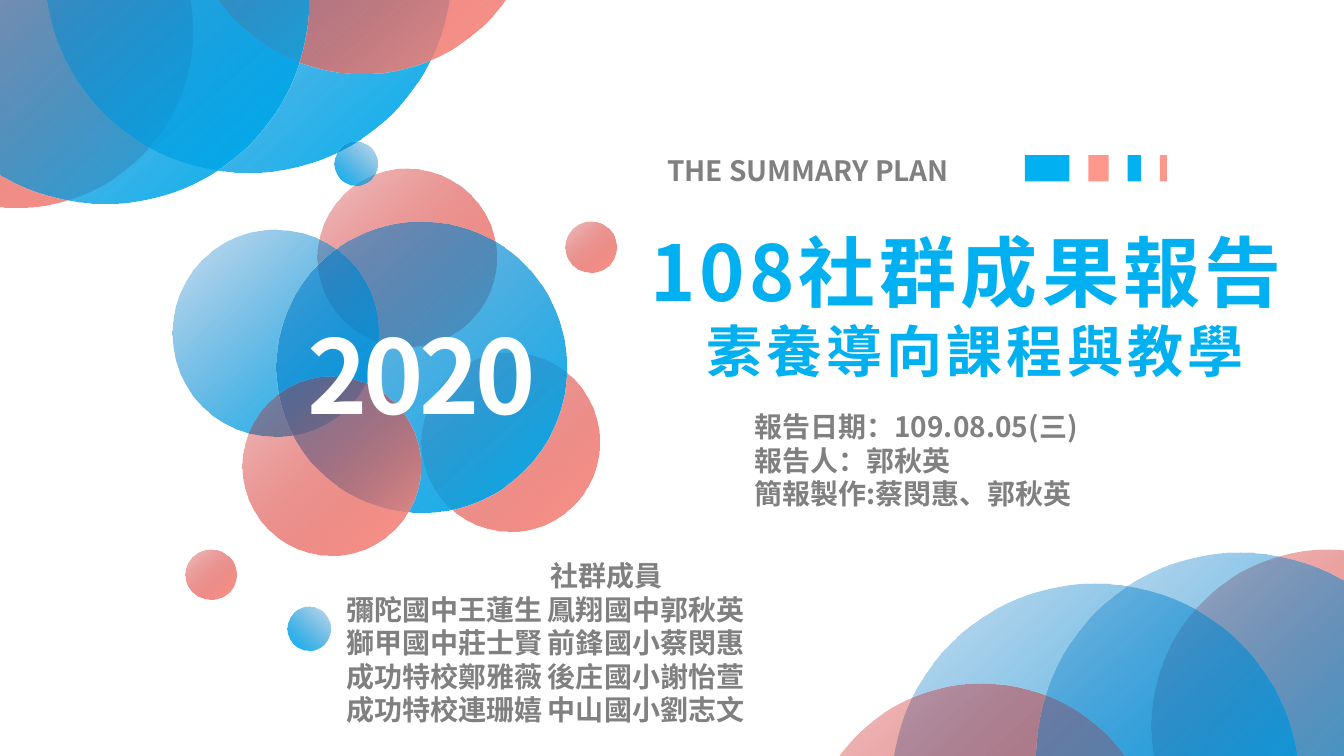
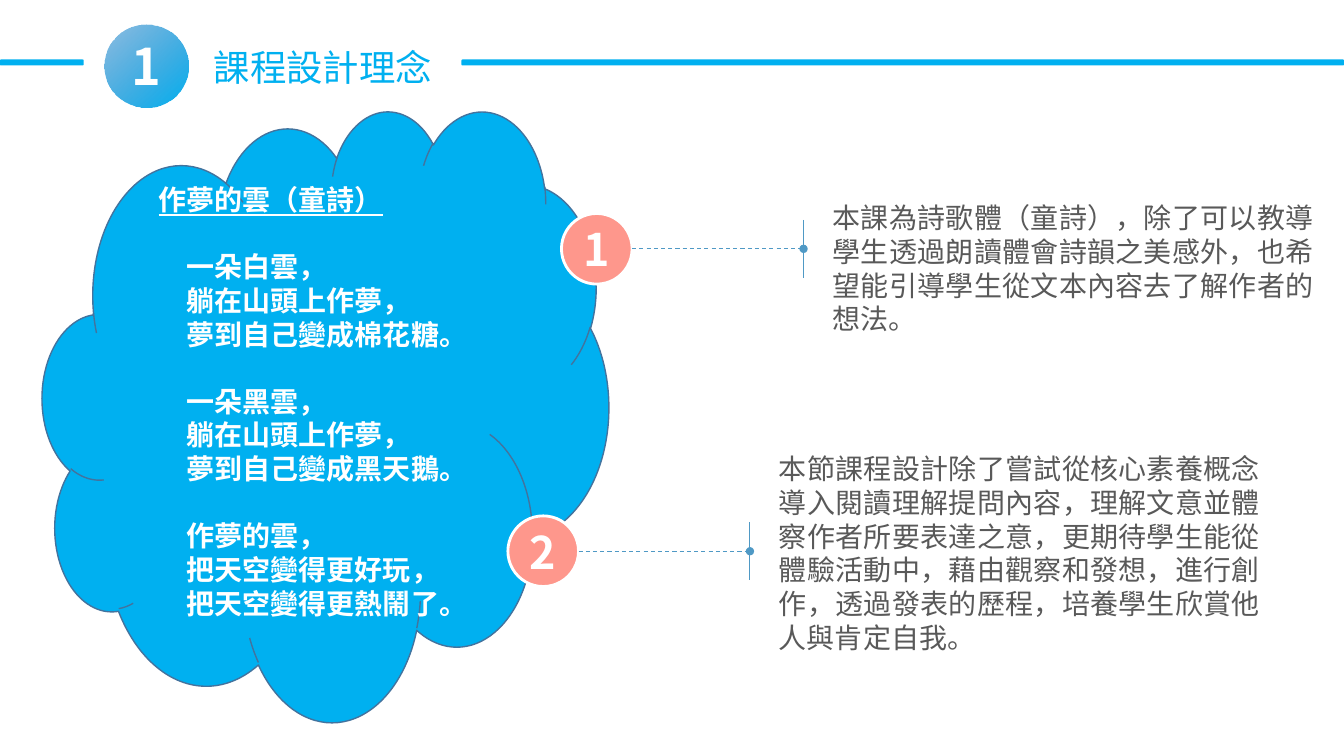
from dataclasses import dataclass

from lxml import etree
from pptx import Presentation
from pptx.dml.color import RGBColor
from pptx.enum.dml import MSO_LINE
from pptx.enum.shapes import MSO_CONNECTOR, MSO_SHAPE
from pptx.enum.text import MSO_ANCHOR, MSO_AUTO_SIZE, PP_ALIGN
from pptx.oxml.ns import qn
from pptx.util import Cm, Pt

LEFT, CENTER, JUSTIFY = PP_ALIGN.LEFT, PP_ALIGN.CENTER, PP_ALIGN.JUSTIFY
TOP, MIDDLE = MSO_ANCHOR.TOP, MSO_ANCHOR.MIDDLE
OVAL, RECT = MSO_SHAPE.OVAL, MSO_SHAPE.RECTANGLE
ROUNDED, CLOUD = MSO_SHAPE.ROUNDED_RECTANGLE, MSO_SHAPE.CLOUD
STRAIGHT, DASH = MSO_CONNECTOR.STRAIGHT, MSO_LINE.DASH
NO_FIT = MSO_AUTO_SIZE.NONE


@dataclass(frozen=True)
class Theme:
    """Colours, font and type sizes of the deck."""
    font: str = "Noto Sans CJK SC"
    blue: str = "00B0F0"
    deep_blue: str = "0070C0"
    coral: str = "FE978C"
    deep_red: str = "C00000"
    white: str = "FFFFFF"
    grey: str = "808080"
    ink: str = "595959"
    outline: str = "43739E"
    rule: str = "4F99C5"
    year: int = 73
    cover: int = 55
    subtitle: int = 40
    badge: int = 36
    marker: int = 32
    heading: int = 26
    body: int = 20
    leading: float = 1.2


T = Theme()
RED = (T.deep_red, T.coral)
BLUE = (T.deep_blue, T.blue)
LIGHT_TOP_LEFT, LIGHT_TOP_RIGHT = 312, 228
SLIDE_W, SLIDE_H = 33.87, 19.05

COVER_BUBBLES = [
    (RED, -4.04, -3.66, 8.9),
    (BLUE, 1.12, -5.92, 10.27),
    (RED, 4.67, -7.04, 8.9),
    (BLUE, -2.49, -5.13, 10.27),
    (RED, 29.03, 13.84, 8.9),
    (BLUE, 22.48, 14.71, 10.27),
    (RED, 20.29, 17.22, 8.9),
    (BLUE, 26.11, 13.92, 10.27),
    (RED, 8, 4.24, 4.5),
    (RED, 10.62, 8.89, 4.5),
    (BLUE, 4.34, 5.79, 5.21),
    (BLUE, 6.96, 5.59, 7.32, 44),
    (BLUE, 8.43, 3.58, 1.09, 22, LIGHT_TOP_RIGHT),
    (RED, 14.25, 5.59, 1.28),
    (RED, 6.1, 9.5, 4.5),
    (BLUE, 7.24, 15.29, 1.09, 22, LIGHT_TOP_RIGHT),
    (RED, 4.67, 13.84, 1.28),
]
REPORT = ["報告日期：109.08.05(三)", "報告人：郭秋英", "簡報製作:蔡閔惠、郭秋英"]
MEMBERS = [
    ("彌陀國中王蓮生", "鳳翔國中郭秋英"),
    ("獅甲國中莊士賢", "前鋒國小蔡閔惠"),
    ("成功特校鄭雅薇", "後庄國小謝怡萱"),
    ("成功特校連珊嬉", "中山國小劉志文"),
]
POEM = [
    ("一朵白雲，", "躺在山頭上作夢，", "夢到自己變成棉花糖。"),
    ("一朵黑雲，", "躺在山頭上作夢，", "夢到自己變成黑天鵝。"),
    ("作夢的雲，", "把天空變得更好玩，", "把天空變得更熱鬧了。"),
]
NOTES = [
    (14.15, 5.38, 5.06, 3.43,
     "本課為詩歌體（童詩），除了可以教導學生透過朗讀體會詩韻之美感外，"
     "也希望能引導學生從文本內容去了解作者的想法。"),
    (12.8, 13, 11.39, 5.13,
     "本節課程設計除了嘗試從核心素養概念導入閱讀理解提問內容，"
     "理解文意並體察作者所要表達之意，更期待學生能從體驗活動中，"
     "藉由觀察和發想，進行創作，透過發表的歷程，培養學生欣賞他人與肯定自我。"),
]


def rgb(color):
    """Turn a hex string into a colour."""
    return RGBColor.from_string(color)


def add_line(tf, text, size=T.body, color=T.grey, bold=False, underline=False,
             align=LEFT, spacing=0, before=0, indent=0, tab=0):
    """Add one formatted paragraph to a text frame."""
    p = tf.add_paragraph() if tf.text else tf.paragraphs[0]
    p.alignment = align
    p.line_spacing = Pt(size * T.leading)
    p.space_before = Pt(before)
    pPr = p._p.get_or_add_pPr()
    pPr.set("marL", str(Cm(indent)))
    pPr.set("indent", "0")
    if tab:
        tabs = etree.SubElement(pPr, qn("a:tabLst"))
        etree.SubElement(tabs, qn("a:tab"), pos=str(Cm(tab)), algn="l")
    r = p.add_run()
    r.text = text
    r.font.size = Pt(size)
    r.font.bold = bold
    r.font.underline = underline
    r.font.color.rgb = rgb(color)
    r.font.name = T.font
    rPr = r._r.get_or_add_rPr()
    etree.SubElement(rPr, qn("a:ea"), typeface=T.font)
    if spacing:
        rPr.set("spc", str(spacing * 100))


def setup_frame(tf, wrap=True, anchor=TOP, inset=None):
    """Set wrapping, anchor and margins of a text frame."""
    tf.auto_size = NO_FIT
    tf.word_wrap = wrap
    tf.vertical_anchor = anchor
    if inset is not None:
        tf.margin_left = tf.margin_right = Cm(inset)
        tf.margin_top = tf.margin_bottom = Cm(inset)
    return tf


def add_text(s, x, y, w, h, **frame):
    """Add a text box and return its frame."""
    box = s.shapes.add_textbox(Cm(x), Cm(y), Cm(w), Cm(h))
    return setup_frame(box.text_frame, **frame)


def place(ph, x, y, w, h, **frame):
    """Move a placeholder and return its frame."""
    ph.left, ph.top, ph.width, ph.height = Cm(x), Cm(y), Cm(w), Cm(h)
    return setup_frame(ph.text_frame, **frame)


def add_block(s, kind, x, y, w, h, fill=None, line=None, weight=1):
    """Add a preset shape with a plain fill and optional outline."""
    sp = s.shapes.add_shape(kind, Cm(x), Cm(y), Cm(w), Cm(h))
    sp.shadow.inherit = False
    if fill:
        sp.fill.solid()
        sp.fill.fore_color.rgb = rgb(fill)
    if line:
        sp.line.color.rgb = rgb(line)
        sp.line.width = Pt(weight)
    else:
        sp.line.fill.background()
    return sp


def add_bubble(s, colors, x, y, d, opacity=22, angle=LIGHT_TOP_LEFT):
    """Add a circle whose gradient starts translucent."""
    sp = add_block(s, OVAL, x, y, d, d)
    sp.fill.gradient()
    sp.fill.gradient_angle = angle
    for stop, color in zip(sp.fill.gradient_stops, colors):
        stop.color.rgb = rgb(color)
    first = next(sp._element.spPr.iter(qn("a:srgbClr")))
    etree.SubElement(first, qn("a:alpha"), val=str(opacity * 1000))
    return sp


def add_rule(s, x1, y1, x2, y2, dotted_end=False):
    """Add a thin line, dashed with an oval end on request."""
    c = s.shapes.add_connector(STRAIGHT, Cm(x1), Cm(y1), Cm(x2), Cm(y2))
    c.line.color.rgb = rgb(T.rule)
    c.line.width = Pt(0.75)
    if dotted_end:
        c.line.dash_style = DASH
        etree.SubElement(c.line._get_or_add_ln(), qn("a:tailEnd"), type="oval")
    etree.SubElement(c._element.spPr, qn("a:effectLst"))


def add_note(s, number, x, y, text_top, text_h, text):
    """Add a numbered marker, its leader line and its explanation."""
    d, tick_x, half_tick = 1.78, x + 6.1, 0.73
    mid = y + d / 2
    tf = add_text(s, x + 6.83, text_top, 12.12, text_h, inset=0)
    add_line(tf, text, color=T.ink, align=JUSTIFY)
    sp = add_block(s, OVAL, x, y, d, d, T.coral, T.white, 2)
    tf = setup_frame(sp.text_frame, anchor=MIDDLE)
    add_line(tf, str(number), size=T.marker, color=T.white, bold=True, align=CENTER)
    add_rule(s, x + d, mid, tick_x, mid, dotted_end=True)
    add_rule(s, tick_x, mid - half_tick, tick_x, mid + half_tick)


def add_color_bars(s, x, y, h, gap):
    """Add the row of narrowing colour bars."""
    for i, w in enumerate((1.12, 0.51, 0.33, 0.18)):
        add_block(s, RECT, x, y, w, h, T.coral if i % 2 else T.blue)
        x += w + gap


def build_cover(prs):
    """Build the cover slide."""
    s = prs.slides.add_slide(prs.slide_layouts[0])
    tf = place(s.shapes.title, 16.13, 5.53, 16.89, 4.32)
    title = {"color": T.blue, "bold": True, "spacing": 3}
    add_line(tf, "108社群成果報告", size=T.cover, **title)
    add_line(tf, "素養導向課程與教學", size=T.subtitle, align=CENTER, **title)
    tf = place(s.placeholders[1], 18.75, 10.19, 9.58, 2.82)
    for text in REPORT:
        add_line(tf, text, bold=True)
    for bubble in COVER_BUBBLES:
        add_bubble(s, *bubble)
    tf = add_text(s, 7.04, 7.75, 7.19, 3.51)
    add_line(tf, "2020", size=T.year, color=T.white, bold=True, align=CENTER, spacing=-3)
    add_color_bars(s, 25.83, 3.91, 0.66, 0.48)
    tf = add_text(s, 16.56, 3.74, 9.37, 1.12)
    add_line(tf, "THE SUMMARY PLAN", bold=True)
    tf = add_text(s, 8.48, 13.95, 13.61, 4.52)
    add_line(tf, "社群成員", bold=True, align=CENTER)
    for pair in MEMBERS:
        add_line(tf, "\t".join(pair), bold=True, tab=6.71)


def add_poem(s):
    """Add the cloud that holds the poem."""
    sp = add_block(s, CLOUD, 1.07, 2.77, 14.27, 15.39, T.blue, T.outline)
    tf = setup_frame(sp.text_frame, anchor=MIDDLE)
    tf.margin_left = Cm(0.96)
    verse = {"color": T.white, "bold": True}
    add_line(tf, "作夢的雲（童詩）", underline=True, **verse)
    for stanza in POEM:
        for i, text in enumerate(stanza):
            gap = 0 if i else T.body * T.leading
            add_line(tf, text, before=gap, indent=0.71, **verse)


def build_concept(prs):
    """Build the course concept slide."""
    s = prs.slides.add_slide(prs.slide_layouts[5])
    tf = place(s.shapes.title, 5.13, 1.02, 6.07, 1.37, wrap=False)
    add_line(tf, "課程設計理念", size=T.heading, color=T.blue)
    for left, right in ((11.63, SLIDE_W), (0, 2.11)):
        add_block(s, ROUNDED, left, 1.5, right - left, 0.15, T.blue)
    badge = add_bubble(s, BLUE, 2.64, 0.61, 2.1, opacity=44)
    tf = setup_frame(badge.text_frame, anchor=MIDDLE, inset=0)
    add_line(tf, "1", size=T.badge, color=T.white, bold=True, align=CENTER, spacing=-3)
    add_poem(s)
    for number, note in enumerate(NOTES, 1):
        add_note(s, number, *note)


def main():
    """Build and save the deck."""
    prs = Presentation()
    prs.slide_width, prs.slide_height = Cm(SLIDE_W), Cm(SLIDE_H)
    build_cover(prs)
    build_concept(prs)
    prs.save("out.pptx")


if __name__ == "__main__":
    main()
